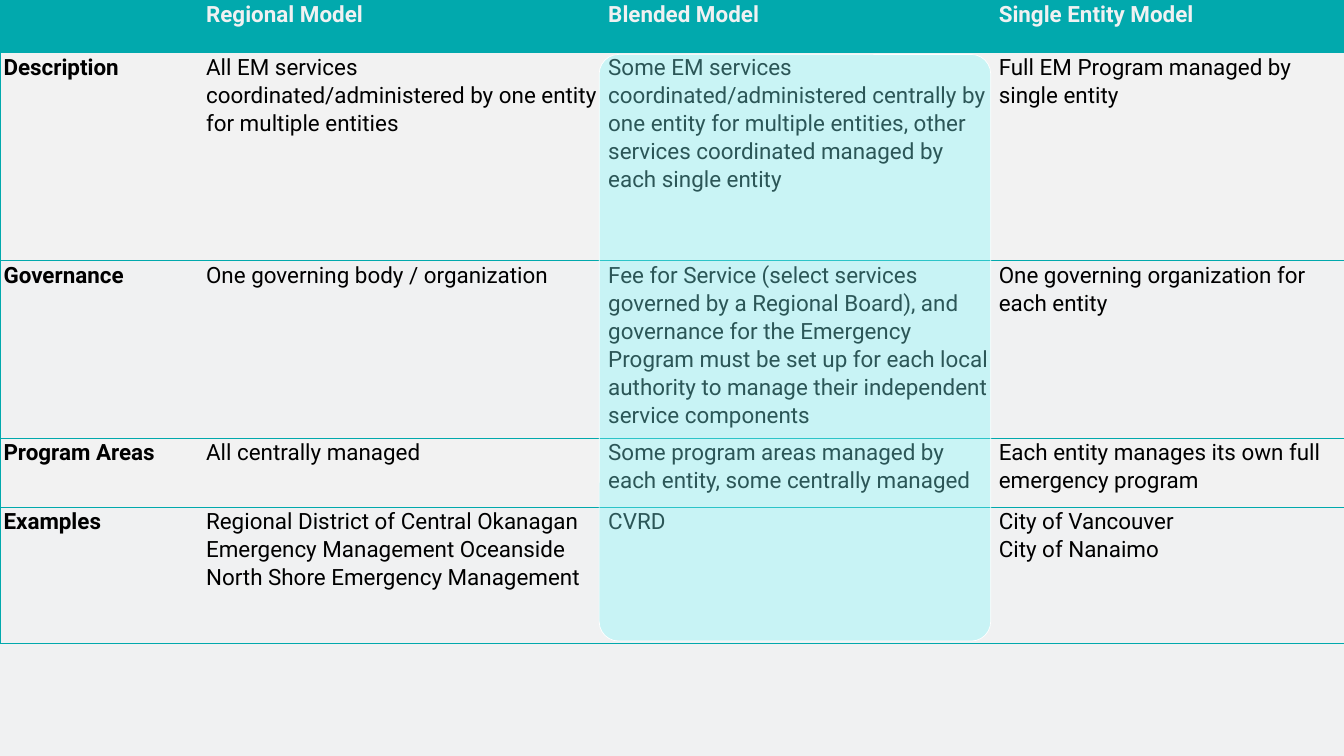
"""Build a slide comparing three emergency management models."""
from lxml.etree import SubElement
from pptx import Presentation
from pptx.dml.color import RGBColor
from pptx.enum.shapes import MSO_SHAPE as Shape
from pptx.enum.text import MSO_ANCHOR as Anchor, PP_ALIGN as Align
from pptx.oxml.ns import qn
from pptx.util import Inches, Pt

TEAL = RGBColor(0x01, 0xA9, 0xAD)
PALE = RGBColor(0xF0, 0xF1, 0xF2)
BAND = RGBColor(0xF2, 0xF2, 0xF2)
AQUA = RGBColor(0x7E, 0xF8, 0xFB)
WHITE = RGBColor(0xFF, 0xFF, 0xFF)
BLACK = RGBColor(0, 0, 0)

COLUMN_WIDTHS = [4.02, 7.98, 7.75, 6.92]
ROW_HEIGHTS = [1.04, 4.13, 3.52, 1.37, 2.7]
MODELS = [
    ["", "Regional Model", "Blended Model", "Single Entity Model"],
    ["Description",
     "All EM services coordinated/administered by one entity for multiple entities",
     "Some EM services coordinated/administered centrally by one entity for multiple "
     "entities, other services coordinated managed by each single entity",
     "Full EM Program managed by single entity"],
    ["Governance",
     "One governing body / organization",
     "Fee for Service (select services governed by a Regional Board), and governance "
     "for the Emergency Program must be set up for each local authority to manage "
     "their independent service components",
     "One governing organization for each entity"],
    ["Program Areas",
     "All centrally managed",
     "Some program areas managed by each entity, some centrally managed",
     "Each entity manages its own full emergency program"],
    ["Examples",
     "Regional District of Central Okanagan Emergency Management Oceanside "
     "North Shore Emergency Management",
     "CVRD",
     "City of Vancouver\nCity of Nanaimo"],
]


def set_borders(cell, visible_sides):
    """Draw teal lines on the visible sides and clear the others."""
    properties = cell._tc.get_or_add_tcPr()
    for side in "LRTB":
        line = SubElement(properties, qn(f"a:ln{side}"), w=str(Pt(0.75)))
        if side in visible_sides:
            fill = SubElement(line, qn("a:solidFill"))
            SubElement(fill, qn("a:srgbClr"), val=str(TEAL))
        else:
            SubElement(line, qn("a:noFill"))


def fill_cell(cell, color):
    """Fill a cell with a colour, or leave it clear."""
    if color is None:
        cell.fill.background()
    else:
        cell.fill.solid()
        cell.fill.fore_color.rgb = color


def write_cell(cell, text, color, bold):
    """Write and format the text of a cell."""
    cell.margin_left = cell.margin_right = Inches(0.07)
    cell.margin_top = cell.margin_bottom = 0
    cell.vertical_anchor = Anchor.TOP
    cell.text_frame.text = text
    for paragraph in cell.text_frame.paragraphs:
        paragraph.alignment = Align.LEFT
        paragraph.line_spacing = 1.07
        paragraph.font.name = "Roboto"
        paragraph.font.size = Pt(32)
        paragraph.font.bold = bold
        paragraph.font.color.rgb = color


def add_model_table(slide):
    """Add the comparison table with its header and banded rows."""
    table = slide.shapes.add_table(
        len(ROW_HEIGHTS), len(COLUMN_WIDTHS), 0, 0,
        Inches(sum(COLUMN_WIDTHS)), Inches(sum(ROW_HEIGHTS))).table
    table.horz_banding = False
    for column, width in zip(table.columns, COLUMN_WIDTHS):
        column.width = Inches(width)
    for row, height in zip(table.rows, ROW_HEIGHTS):
        row.height = Inches(height)
    last_column = len(COLUMN_WIDTHS) - 1
    for row_index, texts in enumerate(MODELS):
        is_header = row_index == 0
        row_fill = TEAL if is_header else BAND if row_index % 2 else None
        for column_index, text in enumerate(texts):
            cell = table.cell(row_index, column_index)
            outer_sides = {0: "L", last_column: "R"}.get(column_index, "")
            set_borders(cell, "TB" + outer_sides)
            fill_cell(cell, row_fill)
            write_cell(cell, text, PALE if is_header else BLACK,
                       is_header or column_index == 0)


def add_highlight(slide):
    """Add the translucent panel over the blended model."""
    panel = slide.shapes.add_shape(
        Shape.ROUNDED_RECTANGLE,
        Inches(11.89), Inches(1.08), Inches(7.77), Inches(11.64))
    panel.adjustments[0] = 0.05
    panel.shadow.inherit = False
    panel.fill.solid()
    panel.fill.fore_color.rgb = AQUA
    color = panel.fill._xPr.find(qn("a:solidFill"))[0]
    SubElement(color, qn("a:alpha"), val="35000")
    panel.line.color.rgb = WHITE
    panel.line.width = Pt(1)


def main():
    """Create and save the presentation."""
    presentation = Presentation()
    presentation.slide_width = Inches(26.67)
    presentation.slide_height = Inches(15)
    slide = presentation.slides.add_slide(presentation.slide_layouts[6])
    slide.background.fill.solid()
    slide.background.fill.fore_color.rgb = PALE
    add_model_table(slide)
    add_highlight(slide)
    presentation.save("out.pptx")


if __name__ == "__main__":
    main()
